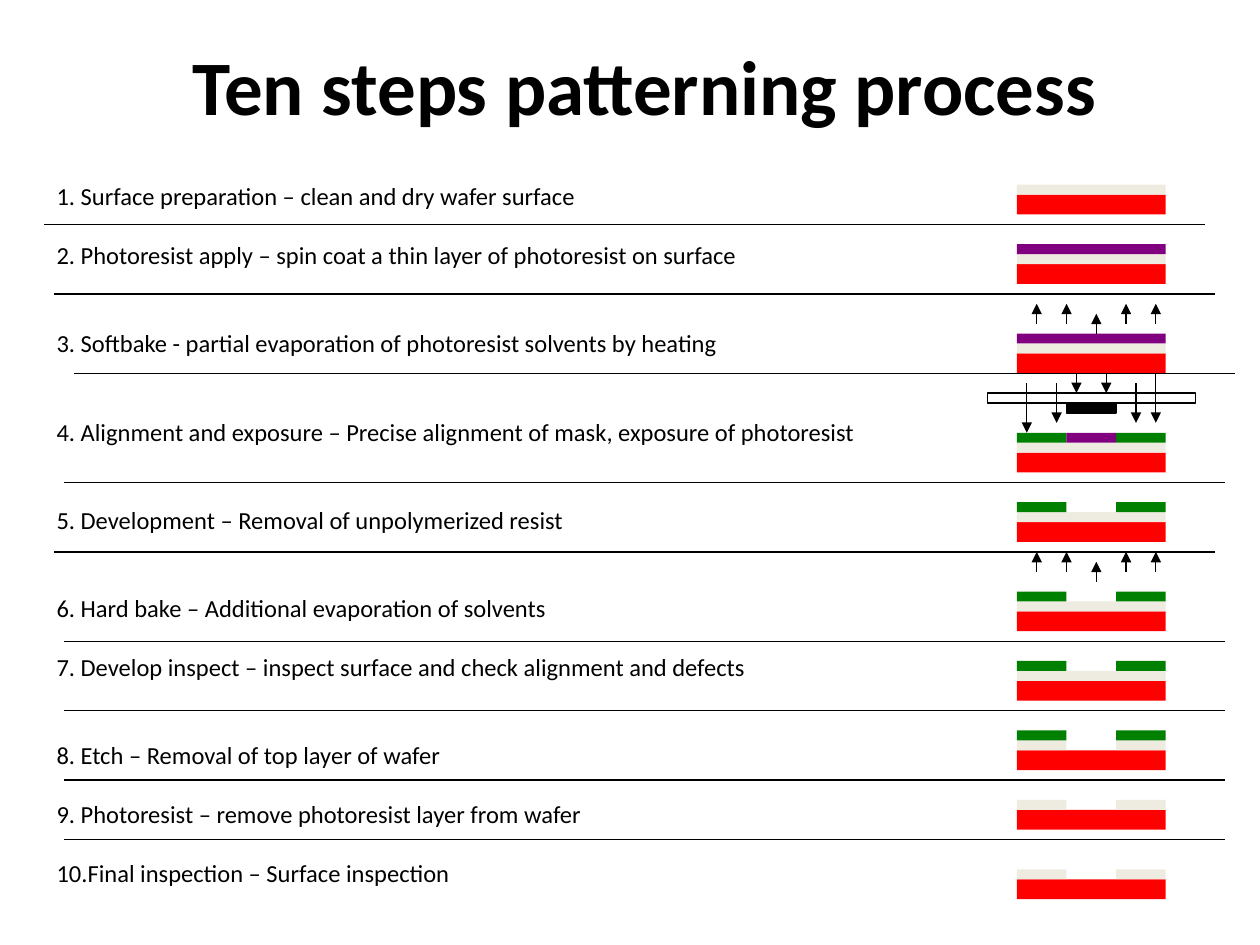
from lxml import etree
from pptx import Presentation
from pptx import util as u
from pptx.dml.color import RGBColor
from pptx.enum import shapes, text
from pptx.oxml.ns import qn

Pt = u.Pt
COLOURS = {
    "ink": "000000",
    "paper": "FFFFFF",
    "silicon": "FF0000",
    "oxide": "EEECE1",
    "resist": "800080",
    "exposed": "008000",
}
# Drawing grid: units to the right of the wafer's left edge and
# below the top of the first silicon bar
UNIT = 5.67
LEFT, TOP = 581.1, 111.24

deck = Presentation()
deck.slide_width, deck.slide_height = Pt(720), Pt(540)
page = deck.slides.add_slide(deck.slide_layouts[6])


def add_bar(colour, column, row, columns, rows=1, outlined=False):
    bar = page.shapes.add_shape(
        shapes.MSO_SHAPE.RECTANGLE,
        Pt(LEFT + column * UNIT), Pt(TOP + row * UNIT),
        Pt(columns * UNIT), Pt(rows * UNIT))
    bar.shadow.inherit = False
    bar.fill.solid()
    bar.fill.fore_color.rgb = RGBColor.from_string(COLOURS[colour])
    if outlined:
        bar.line.color.rgb = RGBColor.from_string(COLOURS["ink"])
        bar.line.width = Pt(0.75)
    else:
        bar.line.fill.background()


def add_line(column, row, end_column, end_row, arrow=False):
    line = page.shapes.add_connector(
        shapes.MSO_CONNECTOR.STRAIGHT,
        Pt(LEFT + column * UNIT), Pt(TOP + row * UNIT),
        Pt(LEFT + end_column * UNIT), Pt(TOP + end_row * UNIT))
    line.line.color.rgb = RGBColor.from_string(COLOURS["ink"])
    line.line.width = Pt(0.75)
    if arrow:
        outline = line.line._get_or_add_ln()
        etree.SubElement(outline, qn("a:tailEnd"), type="triangle")
    etree.SubElement(line._element.spPr, qn("a:effectLst"))


# Title and list of steps
title = page.shapes.add_textbox(Pt(19.44), Pt(3.6), Pt(698.4), Pt(90))
title.text_frame.text = "Ten steps patterning process"
title.text_frame.paragraphs[0].alignment = text.PP_ALIGN.CENTER

# Each step with the number of line heights left above it
steps = [
    (0, "1. Surface preparation – clean and dry wafer surface"),
    (1, "2. Photoresist apply – spin coat a thin layer of photoresist on surface"),
    (2, "3. Softbake - partial evaporation of photoresist solvents by heating"),
    (2, "4. Alignment and exposure – Precise alignment of mask, exposure of photoresist"),
    (2, "5. Development – Removal of unpolymerized resist"),
    (2, "6. Hard bake – Additional evaporation of solvents"),
    (1, "7. Develop inspect – inspect surface and check alignment and defects"),
    (2, "8. Etch – Removal of top layer of wafer"),
    (1, "9. Photoresist – remove photoresist layer from wafer"),
    (1, "10.Final inspection – Surface inspection"),
]
step_list = page.shapes.add_textbox(Pt(25.2), Pt(100.08), Pt(512.64), Pt(408.96))
step_list.text_frame.text = "\n".join(wording for gap, wording in steps)
for (gap, wording), para in zip(steps, step_list.text_frame.paragraphs):
    if gap:
        para.space_before = Pt(gap * 16.8)

for box, size, bold, anchor in (
        (title, 44, True, text.MSO_ANCHOR.MIDDLE),
        (step_list, 14, False, text.MSO_ANCHOR.TOP)):
    box.text_frame.word_wrap = True
    box.text_frame.vertical_anchor = anchor
    for para in box.text_frame.paragraphs:
        for span in para.runs:
            span.font.name = "Calibri"
            span.font.size = Pt(size)
            span.font.bold = bold
            span.font.color.rgb = RGBColor.from_string(COLOURS["ink"])

# Wafer cross-sections: row of the silicon, then the layers upwards,
# each made of (colour, column, columns) bars
full_oxide = [("oxide", 0, 15)]
open_oxide = [("oxide", 0, 5), ("oxide", 10, 5)]
full_resist = [("resist", 0, 15)]
open_resist = [("exposed", 0, 5), ("exposed", 10, 5)]
wafers = [
    (0, [full_oxide]),
    (7, [full_oxide, full_resist]),
    (16, [full_oxide, full_resist]),
    (26, [full_oxide, open_resist + [("resist", 5, 5)]]),
    (33, [full_oxide, open_resist]),
    (42, [full_oxide, open_resist]),
    (49, [full_oxide, open_resist]),
    (56, [open_oxide, open_resist]),
    (62, [open_oxide]),
    (69, [open_oxide]),
]
for row, layers in wafers:
    add_bar("silicon", 0, row, 15, 2)
    for height, layer in enumerate(layers, start=1):
        for colour, column, columns in layer:
            add_bar(colour, column, row - height, columns)

# Exposure mask and light
add_bar("paper", -3, 20, 21, outlined=True)
add_bar("ink", 5, 21, 5, outlined=True)
for column, start, end in ((1, 19, 24), (4, 19, 23), (6, 18, 20),
                           (9, 18, 20), (12, 19, 23), (14, 18, 23)):
    add_line(column, start, column, end, arrow=True)

# Solvent vapour above the two baked wafers, lower in the middle
for bake_row in (13, 38):
    for column in (2, 5, 8, 11, 14):
        start = bake_row + (column == 8)
        add_line(column, start, column, start - 2, arrow=True)

# Rules between the steps
for column, row in ((-98, 3), (-97, 10), (-95, 18), (-96, 29), (-97, 36),
                    (-96, 45), (-96, 52), (-96, 59), (-96, 65)):
    add_line(column, row, column + 117, row)

deck.save("out.pptx")
